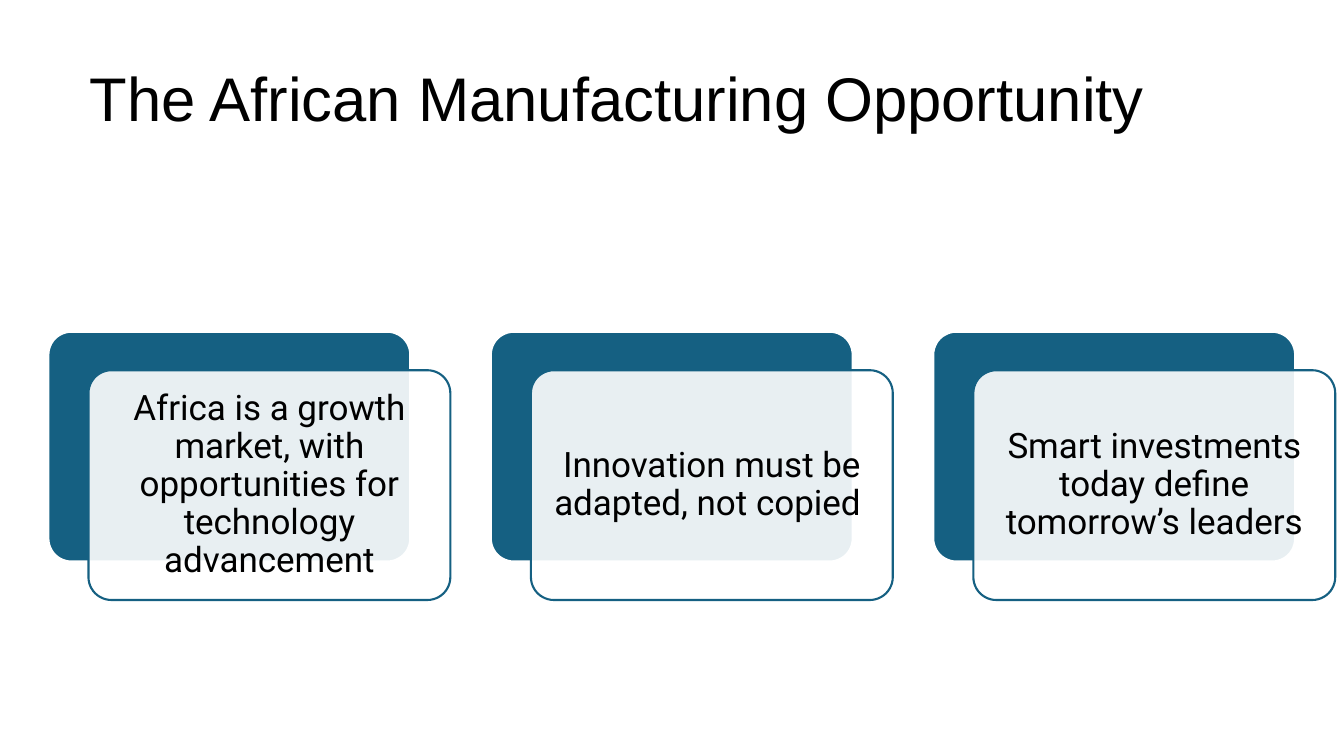
from lxml.etree import SubElement
from pptx import Presentation
from pptx.dml.color import RGBColor
from pptx.enum.shapes import MSO_SHAPE
from pptx.enum.text import MSO_ANCHOR, PP_ALIGN
from pptx.oxml.ns import qn
from pptx.util import Cm, Pt

COLORS = {"blue": "156082", "white": "FFFFFF", "black": "000000"}
MESSAGES = [
    "Africa is a growth market, with opportunities for technology advancement",
    "Innovation must be adapted, not copied ",
    "Smart investments today define tomorrow’s leaders",
]

# Card grid, in centimetres
LEFT, TOP, PITCH = 1.22, 8.36, 11.15
WIDTH, HEIGHT = 9.12, 5.79
SHIFT_X, SHIFT_Y = 1.01, 0.97


class SlideBuilder:
    """Holds the style and the current slide."""

    title_font, card_font = "Arial", "Roboto"
    title_size, card_size = Pt(44), Pt(25)

    def __init__(self, prs):
        self.slide = prs.slides.add_slide(prs.slide_layouts[5])

    def color(self, name):
        return RGBColor.from_string(COLORS[name])

    def text(self, sp, text, font, size, align):
        tf = sp.text_frame
        tf.word_wrap = True
        tf.vertical_anchor = MSO_ANCHOR.MIDDLE
        p = tf.paragraphs[0]
        p.text = text
        p.alignment = align
        p.line_spacing = 0.9
        p.font.name = font
        p.font.size = size
        p.font.color.rgb = self.color("black")

    def title(self, text):
        sp = self.slide.shapes.title
        sp.left, sp.top, sp.width, sp.height = Cm(2.01), Cm(0.71), Cm(29.21), Cm(3.68)
        self.text(sp, text, self.title_font, self.title_size, PP_ALIGN.LEFT)

    def panel(self, x, y, fill, line, opacity=100):
        sp = self.slide.shapes.add_shape(
            MSO_SHAPE.ROUNDED_RECTANGLE, Cm(x), Cm(y), Cm(WIDTH), Cm(HEIGHT))
        sp.adjustments[0] = 0.1
        sp.shadow.inherit = False
        sp.fill.solid()
        sp.fill.fore_color.rgb = self.color(fill)
        sp.line.color.rgb = self.color(line)
        sp.line.width = Pt(1.5)
        if opacity < 100:
            clr = sp.fill._xPr.find(qn("a:solidFill"))[0]
            SubElement(clr, qn("a:alpha")).set("val", str(opacity * 1000))
        return sp

    def card(self, x, y, text):
        self.panel(x, y, "blue", "white")
        sp = self.panel(x + SHIFT_X, y + SHIFT_Y, "white", "blue", opacity=90)
        tf = sp.text_frame
        tf.margin_left = tf.margin_right = tf.margin_top = tf.margin_bottom = Cm(0.25)
        self.text(sp, text, self.card_font, self.card_size, PP_ALIGN.CENTER)


def main():
    prs = Presentation()
    prs.slide_width, prs.slide_height = Cm(33.87), Cm(19.05)
    builder = SlideBuilder(prs)

    # Title
    builder.title("The African Manufacturing Opportunity")

    # Row of message cards
    for i, message in enumerate(MESSAGES):
        builder.card(LEFT + i * PITCH, TOP, message)

    prs.save("out.pptx")


if __name__ == "__main__":
    main()
